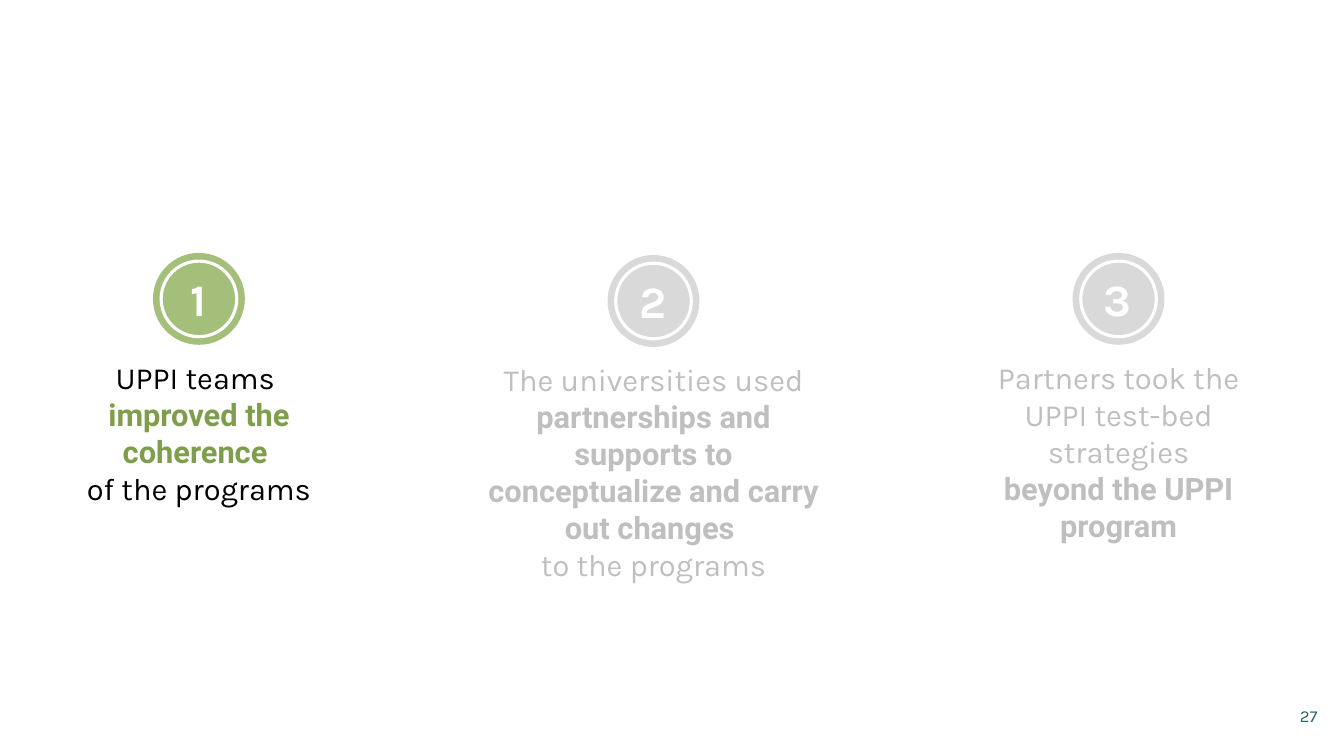
from pptx import Presentation
from pptx.dml.color import RGBColor
from pptx.enum.shapes import MSO_SHAPE
from pptx.enum.text import MSO_ANCHOR, PP_ALIGN
from pptx.util import Pt

OVAL = MSO_SHAPE.OVAL
TOP, MIDDLE = MSO_ANCHOR.TOP, MSO_ANCHOR.MIDDLE
CENTER, RIGHT = PP_ALIGN.CENTER, PP_ALIGN.RIGHT

WHITE, BLACK, TEAL = "FFFFFF", "000000", "29656A"
LIME, GREEN = "A4BF7A", "7E9E4C"
PALE, GRAY = "D9D9D9", "BFBFBF"
BADGE, RING = 65.6, 54

# Each point: centre, top, text width, text height, badge, plain and bold
# colours, then paragraphs of (text, bold) runs.
POINTS = [
    (142.1, 180.7, 220.3, 113.8, LIME, BLACK, GREEN, [
        [("UPPI teams ", False)],
        [("improved the coherence ", True)],
        [("of the programs", False)],
    ]),
    (466.8, 182.2, 266.4, 140.4, PALE, GRAY, GRAY, [
        [("The universities used ", False),
         ("partnerships and supports to conceptualize and carry out changes ",
          True)],
        [("to the programs", False)],
    ]),
    (799, 180.7, 224.6, 113.8, PALE, GRAY, GRAY, [
        [("Partners took the UPPI test-bed strategies", False)],
        [("beyond the UPPI program", True)],
    ]),
]


def color(code):
    """Turn a hex string into a colour."""
    return RGBColor.from_string(code)


def add_text(slide, left, top, width, height, paras, align=CENTER, anchor=TOP):
    """Add a text box; each run is (text, size, font, colour, bold)."""
    box = slide.shapes.add_textbox(Pt(left), Pt(top), Pt(width), Pt(height))
    frame = box.text_frame
    frame.word_wrap = True
    frame.vertical_anchor = anchor
    for i, runs in enumerate(paras):
        para = frame.add_paragraph() if i else frame.paragraphs[0]
        para.alignment = align
        for text, size, face, code, bold in runs:
            run = para.add_run()
            run.text = text
            run.font.size = Pt(size)
            run.font.name = face
            run.font.bold = bold
            run.font.color.rgb = color(code)


def add_disc(slide, x, y, size, fill=None, line=None):
    """Add a circle centred on x, y, either filled or outlined."""
    disc = slide.shapes.add_shape(
        OVAL, Pt(x - size / 2), Pt(y - size / 2), Pt(size), Pt(size))
    disc.shadow.inherit = False
    if fill:
        disc.fill.solid()
        disc.fill.fore_color.rgb = color(fill)
    else:
        disc.fill.background()
    if line:
        disc.line.color.rgb = color(line)
        disc.line.width = Pt(2.25)
    else:
        disc.line.fill.background()


def add_badge(slide, x, top, label, fill):
    """Add a ringed disc with a number in it."""
    y = top + BADGE / 2
    add_disc(slide, x, y, BADGE, fill=fill)
    add_disc(slide, x, y, RING, line=WHITE)
    add_text(slide, x - 25, top + 10.1, 49, 46,
             [[(label, 32, "Karla", WHITE, True)]])


def add_point(slide, label, point):
    """Add one numbered finding: a badge with its text below."""
    x, top, width, height, fill, plain, strong, paras = point
    add_badge(slide, x, top, label, fill)
    styled = [[(text, 22, "Roboto" if bold else "Karla",
                strong if bold else plain, bold) for text, bold in runs]
              for runs in paras]
    add_text(slide, x - width / 2, top + 72, width, height, styled)


def main():
    """Build and save the slide."""
    deck = Presentation()
    deck.slide_width, deck.slide_height = Pt(960), Pt(540)
    slide = deck.slides.add_slide(deck.slide_layouts[6])
    for number, point in enumerate(POINTS, 1):
        add_point(slide, str(number), point)
    add_text(slide, 732.2, 496.8, 216, 28.8,
             [[("27", 12, "Karla", TEAL, False)]], RIGHT, MIDDLE)
    deck.save("out.pptx")


if __name__ == "__main__":
    main()
